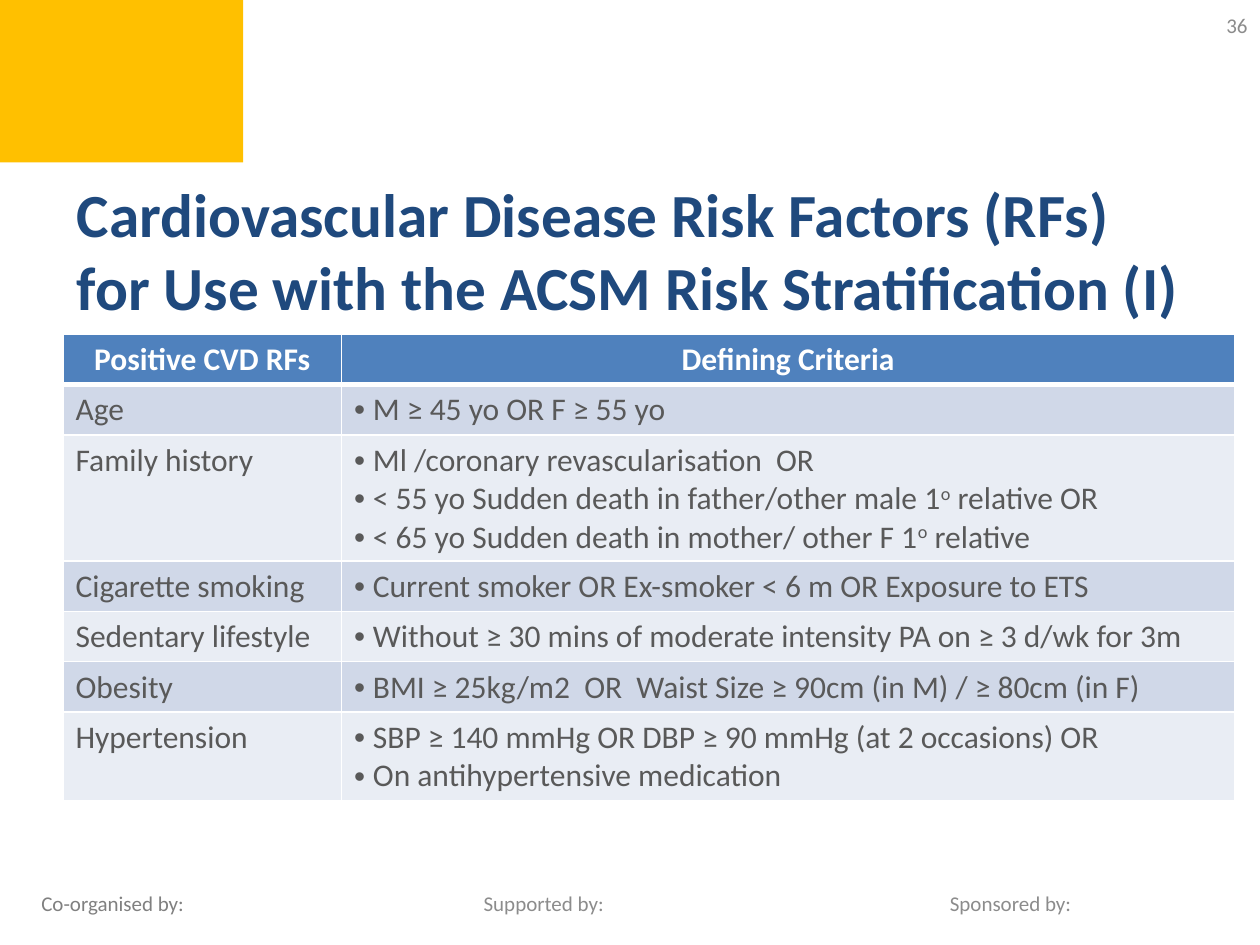
"""Build the slide on cardiovascular disease risk factors."""
from lxml import etree
from pptx import Presentation
from pptx.dml.color import RGBColor
from pptx.enum.shapes import MSO_SHAPE
from pptx.enum.text import MSO_ANCHOR, MSO_AUTO_SIZE, PP_ALIGN
from pptx.oxml.ns import qn
from pptx.util import Inches, Pt

LEFT, CENTER, RIGHT = PP_ALIGN.LEFT, PP_ALIGN.CENTER, PP_ALIGN.RIGHT
MIDDLE = MSO_ANCHOR.MIDDLE
NO_AUTOFIT = MSO_AUTO_SIZE.NONE
RECTANGLE = MSO_SHAPE.RECTANGLE

WHITE = RGBColor(0xFF, 0xFF, 0xFF)
AMBER = RGBColor(0xFF, 0xC0, 0x00)
NAVY = RGBColor(0x1F, 0x49, 0x7D)
BLUE = RGBColor(0x4F, 0x81, 0xBD)
BAND_DARK = RGBColor(0xD0, 0xD8, 0xE8)
BAND_LIGHT = RGBColor(0xE9, 0xED, 0xF4)
TEXT_GRAY = RGBColor(0x59, 0x59, 0x59)
MID_GRAY = RGBColor(0x80, 0x80, 0x80)
PALE_GRAY = RGBColor(0x8C, 0x8C, 0x8C)

HEADINGS = ["Positive CVD RFs", "Defining Criteria"]
RISK_FACTORS = [
    ("Age", ["M ≥ 45 yo OR F ≥ 55 yo"]),
    ("Family history", [
        "Ml /coronary revascularisation  OR",
        "< 55 yo Sudden death in father/other male 1^o^ relative OR",
        "< 65 yo Sudden death in mother/ other F 1^o^ relative",
    ]),
    ("Cigarette smoking", ["Current smoker OR Ex-smoker < 6 m OR Exposure to ETS"]),
    ("Sedentary lifestyle",
     ["Without ≥ 30 mins of moderate intensity PA on ≥ 3 d/wk for 3m"]),
    ("Obesity", ["BMI ≥ 25kg/m2  OR  Waist Size ≥ 90cm (in M) / ≥ 80cm (in F)"]),
    ("Hypertension", [
        "SBP ≥ 140 mmHg OR DBP ≥ 90 mmHg (at 2 occasions) OR",
        "On antihypertensive medication",
    ]),
]
ROW_HEIGHTS = [0.4, 0.4, 1, 0.4, 0.4, 0.4, 0.7]
COLUMN_WIDTHS = [2.21, 7.09]
LABELS = [
    ("Co-organised by:", 0.23, 6.97, 3.17, LEFT, MID_GRAY),
    ("Supported by:", 3.74, 6.97, 3.17, LEFT, PALE_GRAY),
    ("Sponsored by:", 7.44, 6.97, 2.28, LEFT, PALE_GRAY),
    ("36", 7.67, 0, 2.33, RIGHT, PALE_GRAY),
]


def style(paragraph, size, color, bold=False, align=LEFT):
    paragraph.alignment = align
    font = paragraph.font
    font.name, font.size, font.bold = "Calibri", Pt(size), bold
    font.color.rgb = color


def add_border(cell, side, width):
    line = etree.SubElement(cell._tc.get_or_add_tcPr(), qn(f"a:ln{side}"), w=str(Pt(width)))
    fill = etree.SubElement(line, qn("a:solidFill"))
    etree.SubElement(fill, qn("a:srgbClr"), val=str(WHITE))


prs = Presentation()
prs.slide_width, prs.slide_height = Inches(10), Inches(7.5)
slide = prs.slides.add_slide(prs.slide_layouts[5])

corner = slide.shapes.add_shape(
    RECTANGLE, Inches(0), Inches(-0.02), Inches(1.93), Inches(1.31))
corner.shadow.inherit = False
corner.fill.solid()
corner.fill.fore_color.rgb = AMBER
corner.line.fill.background()

for text, left, top, width, align, color in LABELS:
    label = slide.shapes.add_textbox(Inches(left), Inches(top), Inches(width), Inches(0.4))
    label.text_frame.word_wrap = True
    label.text_frame.vertical_anchor = MIDDLE
    label.text_frame.text = text
    style(label.text_frame.paragraphs[0], 12, color, align=align)

title = slide.shapes.title
title.left, title.top = Inches(0.51), Inches(1.47)
title.width, title.height = Inches(9), Inches(1.02)
title.text_frame.text = ("Cardiovascular Disease Risk Factors (RFs) "
                         "for Use with the ACSM Risk Stratification (I)")
title.text_frame.auto_size = NO_AUTOFIT
title.text_frame.vertical_anchor = MIDDLE
style(title.text_frame.paragraphs[0], 35, NAVY, bold=True)

table = slide.shapes.add_table(
    len(ROW_HEIGHTS), len(COLUMN_WIDTHS),
    Inches(0.5), Inches(2.65), Inches(9.3), Inches(3.7)).table
for column, width in zip(table.columns, COLUMN_WIDTHS):
    column.width = Inches(width)
for row, height in zip(table.rows, ROW_HEIGHTS):
    row.height = Inches(height)

for r, row in enumerate(table.rows):
    for cell in row.cells:
        add_border(cell, "L", 1)
        add_border(cell, "R", 1)
        add_border(cell, "T", 3 if r == 1 else 1)
        add_border(cell, "B", 3 if r == 0 else 1)
        cell.fill.solid()
        cell.fill.fore_color.rgb = BLUE if r == 0 else BAND_DARK if r % 2 else BAND_LIGHT

for cell, heading in zip(table.rows[0].cells, HEADINGS):
    cell.text = heading
    style(cell.text_frame.paragraphs[0], 18, WHITE, bold=True, align=CENTER)

for r, (factor, criteria) in enumerate(RISK_FACTORS, start=1):
    factor_cell, criteria_cell = table.rows[r].cells
    factor_cell.text = factor
    style(factor_cell.text_frame.paragraphs[0], 18, TEXT_GRAY)
    frame = criteria_cell.text_frame
    for i, criterion in enumerate(criteria):
        paragraph = frame.add_paragraph() if i else frame.paragraphs[0]
        properties = paragraph._p.get_or_add_pPr()
        properties.set("marL", str(Inches(0.15)))
        properties.set("indent", str(Inches(-0.15)))
        etree.SubElement(properties, qn("a:buFont"), typeface="Arial")
        etree.SubElement(properties, qn("a:buChar"), char="•")
        for part, text in enumerate(criterion.split("^")):
            run = paragraph.add_run()
            run.text = text
            if part % 2:
                run._r.get_or_add_rPr().set("baseline", "30000")
        style(paragraph, 18, TEXT_GRAY)

prs.save("out.pptx")
